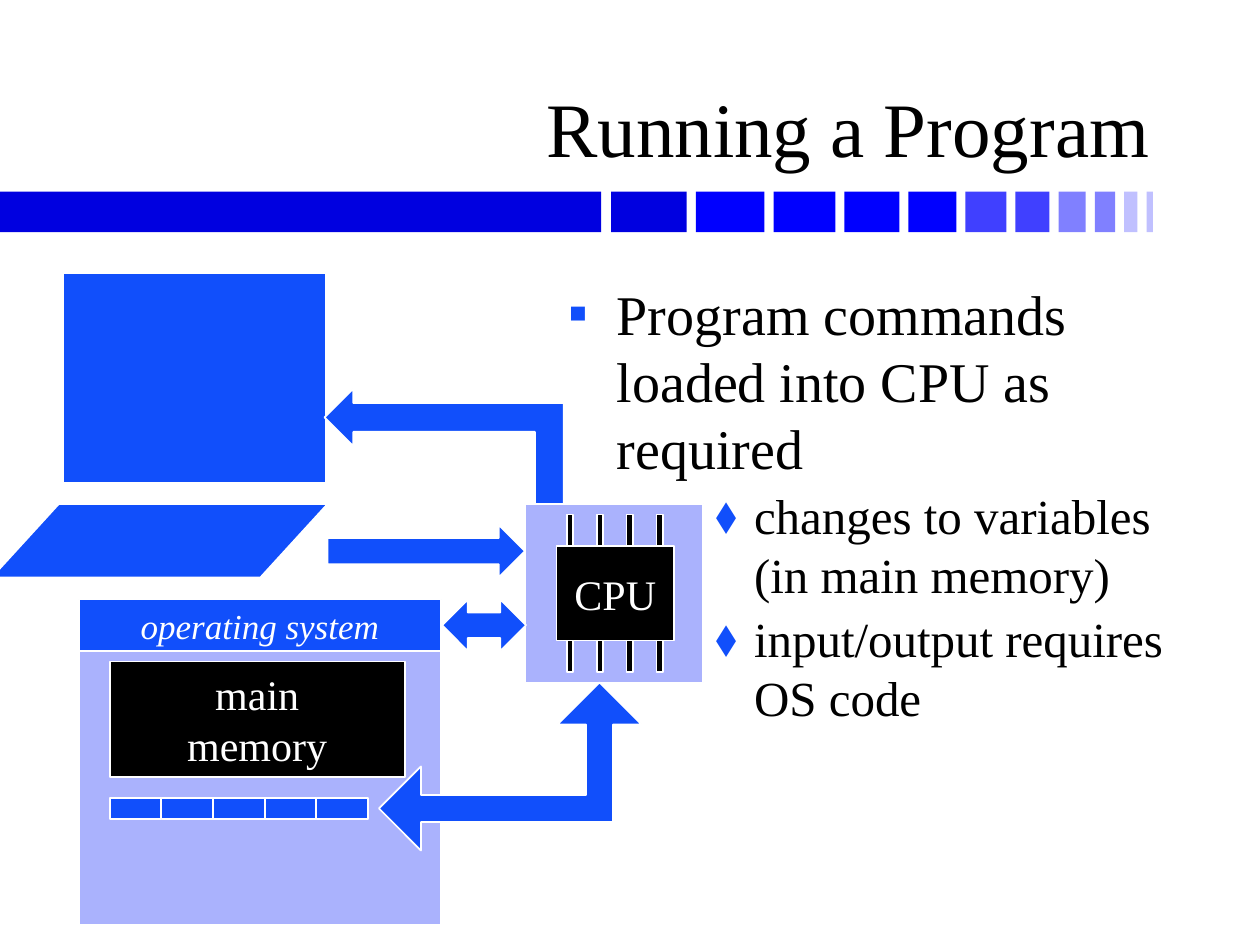
import dataclasses
import typing

import lxml.etree
import pptx
import pptx.dml.color
import pptx.enum.shapes
import pptx.enum.text
import pptx.oxml.ns
import pptx.util

KIND = pptx.enum.shapes.MSO_SHAPE
ALIGN = pptx.enum.text.PP_ALIGN
ANCHOR = pptx.enum.text.MSO_ANCHOR
FONT = "Times New Roman"
BLUE, PALE, BLACK, WHITE = "114FFB", "AAB2FD", "000000", "FFFFFF"
COLS, ROWS = 120, 90  # grid of the whole slide
BAR_TOP, BAR_TALL = 18.25, 3.85
BAR_HUES = ["0000E0"] + ["0000FF"] * 4 + ["4040FF"] * 2 + ["8080FF"] * 2 + ["C0C0FF"] * 2


@dataclasses.dataclass
class Box:
    """A filled shape, placed in grid columns and rows."""
    col: float
    row: float
    wide: float
    tall: float
    fill: str = BLUE
    kind: typing.Any = KIND.RECTANGLE
    line: str = WHITE
    text: str = ""
    size: int = 24
    italic: bool = False
    turn: int = 0
    adjust: tuple[float, ...] = ()


@dataclasses.dataclass
class Point:
    text: str
    size: int
    mark: str
    left: float
    hang: float
    before: float


BOXES = [
    Box(6, 26, 25, 20),
    Box(-0.8, 48, 32, 7, kind=KIND.FLOWCHART_DATA),
    Box(31.2, 50, 18.8, 5, kind=KIND.RIGHT_ARROW),
    Box(36.8, 31.1, 11, 22.8, kind=KIND.BENT_UP_ARROW, turn=270, adjust=(0.25,) * 3),
    Box(50, 48, 17, 17, PALE),
    Box(53, 52, 11.2, 9, BLACK, text="CPU"),
    *[Box(54 + 2.84 * pin, row, 0.6, 3, BLACK) for row in (49, 61) for pin in range(4)],
    Box(7.5, 57.1, 34.5, 31, PALE),
    Box(10.45, 63, 28.1, 11, BLACK, text="main\nmemory"),
    Box(7.5, 57.1, 34.5, 4.9, text="operating system", size=20, italic=True),
    *[Box(10.45 + 4.92 * cell, 76, 4.92, 2) for cell in range(5)],
    Box(36.1, 65, 25, 16, kind=KIND.LEFT_UP_ARROW, adjust=(0.16, 0.25, 0.25)),
    Box(42.1, 57.1, 8, 4.9, kind=KIND.LEFT_RIGHT_ARROW),
]
POINTS = [
    Point("Program commands loaded into CPU as required", 32, "▪", 0.38, 0.38, 6.4),
    Point("changes to variables (in main memory)", 28, "⬧", 1.47, 0.31, 2.8),
    Point("input/output requires OS code", 28, "⬧", 1.47, 0.31, 2.8),
]

deck = pptx.Presentation()
deck.slide_width, deck.slide_height = pptx.util.Inches(10), pptx.util.Inches(7.5)
slide = deck.slides.add_slide(deck.slide_layouts[6])


def hue(code: str) -> pptx.dml.color.RGBColor:
    return pptx.dml.color.RGBColor.from_string(code)


def place(col: float, row: float, wide: float, tall: float) -> list[int]:
    """Turn grid units into slide lengths."""
    across, down = deck.slide_width / COLS, deck.slide_height / ROWS
    return [round(n) for n in (col * across, row * down, wide * across, tall * down)]


def style(para: typing.Any, size: int, color: str, italic: bool = False) -> None:
    for run in para.runs:
        run.font.name = FONT
        run.font.size = pptx.util.Pt(size)
        run.font.italic = italic
        run.font.color.rgb = hue(color)


def draw(box: Box) -> None:
    shape = slide.shapes.add_shape(box.kind, *place(box.col, box.row, box.wide, box.tall))
    shape.shadow.inherit = False
    shape.rotation = box.turn
    for index, value in enumerate(box.adjust):
        shape.adjustments[index] = value
    shape.fill.solid()
    shape.fill.fore_color.rgb = hue(box.fill)
    if box.line:
        shape.line.color.rgb = hue(box.line)
        shape.line.width = pptx.util.Pt(1)
    else:
        shape.line.fill.background()
    if box.text:
        frame = shape.text_frame
        frame.text = box.text
        frame.word_wrap = False
        frame.vertical_anchor = ANCHOR.MIDDLE
        for para in frame.paragraphs:
            para.alignment = ALIGN.CENTER
            style(para, box.size, WHITE, box.italic)


def write(text: str, *area: float) -> typing.Any:
    frame = slide.shapes.add_textbox(*place(*area)).text_frame
    frame.word_wrap = True
    frame.text = text
    return frame


def mark(para: typing.Any, point: Point) -> None:
    """Give a paragraph its hanging indent and blue bullet."""
    props = para._p.get_or_add_pPr()
    props.set("marL", str(pptx.util.Inches(point.left)))
    props.set("indent", str(-pptx.util.Inches(point.hang)))
    tint = lxml.etree.SubElement(props, pptx.oxml.ns.qn("a:buClr"))
    lxml.etree.SubElement(tint, pptx.oxml.ns.qn("a:srgbClr"), val=BLUE)
    lxml.etree.SubElement(props, pptx.oxml.ns.qn("a:buFont"), typeface=FONT)
    lxml.etree.SubElement(props, pptx.oxml.ns.qn("a:buChar"), char=point.mark)


def draw_bar() -> None:
    """Draw the long bar, then blocks that shrink evenly to the right."""
    draw(Box(0, BAR_TOP, 57.25, BAR_TALL, BAR_HUES[0], line=""))
    col, wide, step, gap = 58.2, 7.2, 0.66, 0.87
    for color in BAR_HUES:
        draw(Box(col, BAR_TOP, wide, BAR_TALL, color, line=""))
        col += wide + gap
        wide -= step


def main() -> None:
    draw_bar()
    title = write("Running a Program", 8.9, 2.3, 101.8, 14.8)
    title.vertical_anchor = ANCHOR.BOTTOM
    title.paragraphs[0].alignment = ALIGN.RIGHT
    style(title.paragraphs[0], 44, BLACK)

    body = write("\n".join(point.text for point in POINTS), 53, 26, 59.5, 54)
    for para, point in zip(body.paragraphs, POINTS):
        para.space_before = pptx.util.Pt(point.before)
        mark(para, point)
        style(para, point.size, BLACK)

    for box in BOXES:
        draw(box)
    deck.save("out.pptx")


if __name__ == "__main__":
    main()
